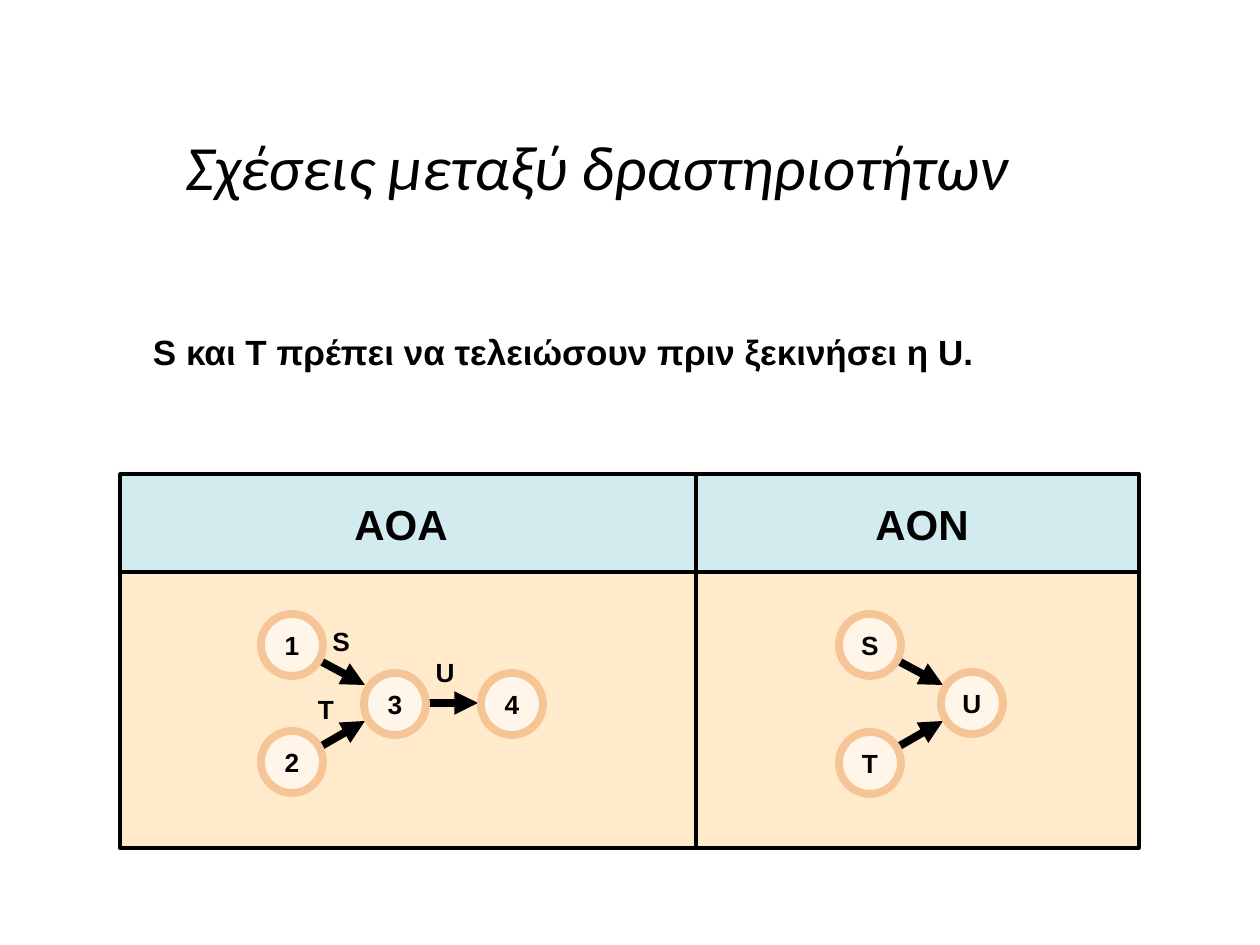
from dataclasses import dataclass

from lxml import etree
from pptx import Presentation
from pptx.dml.color import RGBColor
from pptx.enum import shapes, text
from pptx.oxml.ns import qn
from pptx.util import Emu, Pt

SCALE = 914400 / 126


@dataclass(frozen=True)
class Theme:
    ink: str = "000000"
    head: str = "D1EBEE"
    body: str = "FFEBCC"
    node: str = "FFF5E8"
    ring: str = "F5C597"
    sans: str = "Arial"
    title: str = "Calibri"
    big: int = 36
    mid: int = 24
    lead: int = 20
    small: int = 15
    thin: float = 2
    thick: float = 4.5


THEME = Theme()


def px(*vals):
    return [Emu(round(val * SCALE)) for val in vals]


def tint(hue):
    return RGBColor.from_string(hue)


def write(shape, words, size=THEME.small, font=THEME.sans, bold=True,
          slant=False, align="CENTER", anchor="MIDDLE", wrap=True, pad=0):
    frame = shape.text_frame
    frame.word_wrap = wrap
    frame.vertical_anchor = getattr(text.MSO_ANCHOR, anchor)
    frame.margin_left = frame.margin_right = px(2 * pad)[0]
    frame.margin_top = frame.margin_bottom = px(pad)[0]
    para = frame.paragraphs[0]
    para.alignment = getattr(text.PP_ALIGN, align)
    run = para.add_run()
    run.text = words
    run.font.size = Pt(size)
    run.font.name = font
    run.font.bold = bold
    run.font.italic = slant
    run.font.color.rgb = tint(THEME.ink)


def block(slide, box, fill=None, line=None, width=THEME.thin, kind="RECTANGLE"):
    shape = slide.shapes.add_shape(getattr(shapes.MSO_SHAPE, kind), *px(*box))
    shape.shadow.inherit = False
    if fill:
        shape.fill.solid()
        shape.fill.fore_color.rgb = tint(fill)
    else:
        shape.fill.background()
    if line:
        shape.line.color.rgb = tint(line)
        shape.line.width = Pt(width)
    else:
        shape.line.fill.background()
    return shape


def stroke(slide, ends, width=THEME.thin, arrow=False):
    line = slide.shapes.add_connector(shapes.MSO_CONNECTOR.STRAIGHT, *px(*ends))
    line.line.color.rgb = tint(THEME.ink)
    line.line.width = Pt(width)
    if arrow:
        etree.SubElement(line.line._get_or_add_ln(), qn("a:tailEnd"), type="triangle")
    etree.SubElement(line._element.spPr, qn("a:effectLst"))


def label(slide, words, x, y, wide=54, high=50, size=THEME.small):
    box = slide.shapes.add_textbox(*px(x - wide / 2, y - high / 2, wide, high))
    write(box, words, size=size, wrap=False)


def heading(slide, box):
    title = slide.shapes.title
    title.left, title.top, title.width, title.height = px(*box)
    write(title, "Σχέσεις μεταξύ δραστηριοτήτων", size=THEME.big,
          font=THEME.title, bold=False, slant=True, pad=6)


def rule(slide, box):
    area = slide.shapes.add_textbox(*px(*box))
    write(area, "S και T πρέπει να τελειώσουν πριν ξεκινήσει η U.",
          size=THEME.lead, align="LEFT", anchor="BOTTOM", pad=6)


def panel(slide, box, split, band):
    x, y, wide, high = box
    block(slide, box, fill=THEME.body)
    block(slide, (x, y, wide, band), fill=THEME.head)
    stroke(slide, (x + 2, y + band, x + wide - 2, y + band))
    stroke(slide, (x + split, y + 2, x + split, y + high - 2))
    block(slide, (x + 2, y + 2, wide - 3, high - 4), line=THEME.ink)


def graph(slide, x, y, name, mid, nodes, edges, tags=()):
    label(slide, name, x + mid, y - 48, wide=124, high=66, size=THEME.mid)
    for ax, ay, bx, by in edges:
        stroke(slide, (x + ax, y + ay, x + bx, y + by), THEME.thick, arrow=True)
    for words, cx, cy in nodes:
        ring = block(slide, (x + cx - 31, y + cy - 31, 62, 62), fill=THEME.node,
                     line=THEME.ring, width=THEME.thick, kind="OVAL")
        write(ring, words, wrap=False)
    for words, cx, cy in tags:
        label(slide, words, x + cx, y + cy)


def main():
    deck = Presentation()
    deck.slide_width, deck.slide_height = px(1260, 945)
    slide = deck.slides.add_slide(deck.slide_layouts[5])
    heading(slide, (30, 86, 1134, 158))
    rule(slide, (141, 223, 978, 155))
    left, top, split, band = 118, 472, 578, 100
    panel(slide, (left, top, 1022, 378), split, band)
    joins = [(193, 84, 247, 113), (193, 180, 247, 149)]
    graph(slide, left, top + band, "AOA", 283,
          [("1", 174, 73), ("2", 174, 190), ("3", 277, 132), ("4", 394, 132)],
          joins + [(299, 131, 360, 131)],
          [("S", 223, 69), ("T", 208, 137), ("U", 327, 100)])
    graph(slide, left + split, top + band, "AON", 226,
          [("S", 174, 73), ("T", 174, 191), ("U", 276, 131)], joins)
    deck.save("out.pptx")


if __name__ == "__main__":
    main()
